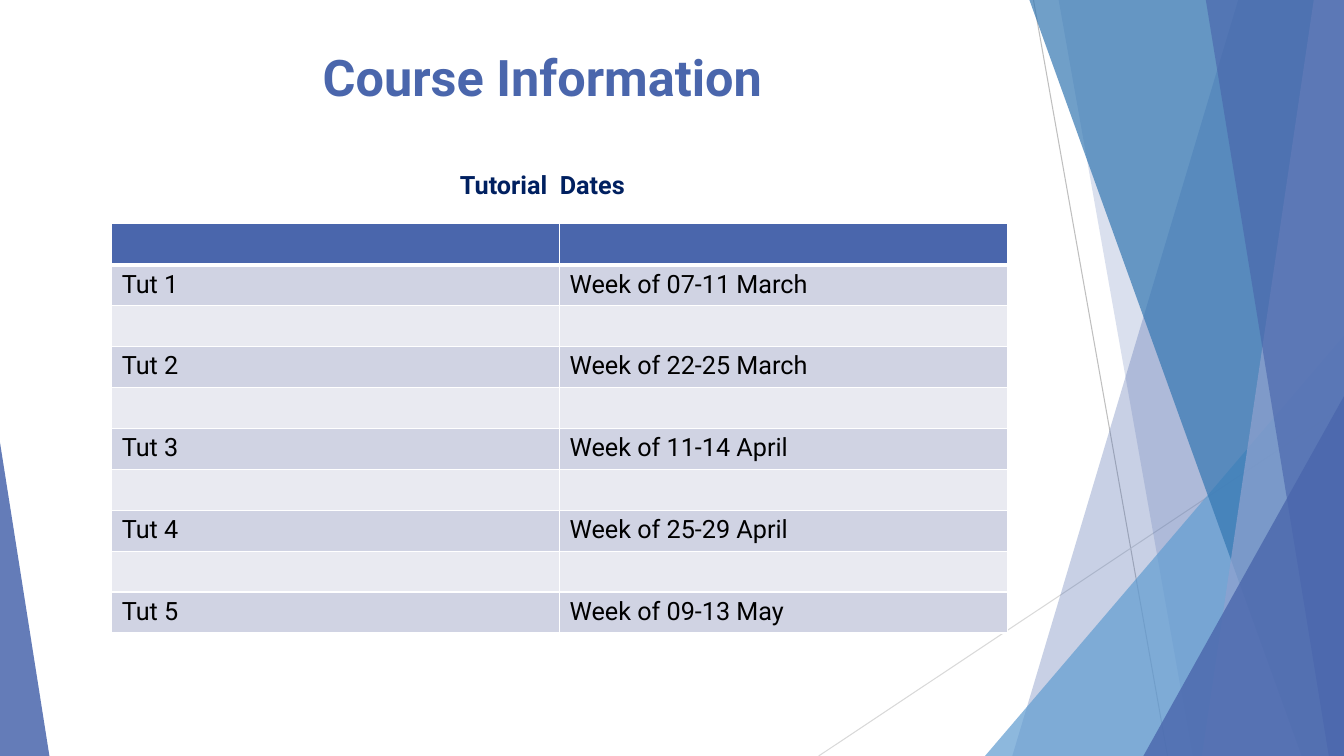
from lxml.etree import SubElement
from pptx import Presentation
from pptx.dml.color import RGBColor
from pptx.enum.shapes import MSO_CONNECTOR, MSO_SHAPE
from pptx.enum.text import MSO_ANCHOR, PP_ALIGN
from pptx.oxml.ns import qn
from pptx.util import Inches, Pt

W, H = 13.33, 7.5
FONT = "Roboto"
BLUE = RGBColor(0x4A, 0x66, 0xAC)
SKY = RGBColor(0x62, 0x9D, 0xD1)
OCEAN = RGBColor(0x34, 0x77, 0xB2)
LAVENDER = RGBColor(0x90, 0xA2, 0xCF)
NAVY = RGBColor(0x00, 0x20, 0x60)
BLACK = RGBColor(0, 0, 0)
WHITE = RGBColor(0xFF, 0xFF, 0xFF)
BAND_DARK = RGBColor(0xD0, 0xD3, 0xE3)
BAND_LIGHT = RGBColor(0xE9, 0xEA, 0xF1)
GREY = RGBColor(0xBF, 0xBF, 0xBF)
PALE_GREY = RGBColor(0xD9, 0xD9, 0xD9)

TUTORIALS = [
    ("Tut 1", "Week of 07-11 March"),
    ("Tut 2", "Week of 22-25 March"),
    ("Tut 3", "Week of 11-14 April"),
    ("Tut 4", "Week of 25-29 April"),
    ("Tut 5", "Week of 09-13 May"),
]


def add_run(p, text, size, color, bold=False):
    r = p.add_run()
    r.text = text
    r.font.name = FONT
    r.font.size = Pt(size)
    r.font.bold = bold
    r.font.color.rgb = color


def paint(sp, color, opacity):
    """Fill without outline or shadow; opacity in percent."""
    sp.shadow.inherit = False
    sp.line.fill.background()
    sp.fill.solid()
    sp.fill.fore_color.rgb = color
    clr = sp.fill._xPr.find(qn("a:solidFill"))[0]
    SubElement(clr, qn("a:alpha")).set("val", str(opacity * 1000))


def add_ray(s, start, end, color):
    ray = s.shapes.add_connector(MSO_CONNECTOR.STRAIGHT, *map(Inches, start + end))
    ray.line.color.rgb = color
    ray.line.width = Pt(0.75)
    SubElement(ray._element.spPr, qn("a:effectLst"))


def add_shard(s, top_x, bottom_x, color, opacity):
    """Full-height panel from a slanted left edge to the slide's right edge."""
    builder = s.shapes.build_freeform(Inches(top_x), 0, scale=1.0)
    corners = [(W, 0), (W, H), (bottom_x, H)]
    builder.add_line_segments([(Inches(x), Inches(y)) for x, y in corners])
    paint(builder.convert_to_shape(), color, opacity)


def add_corner(s, left, top, width, apex, color, opacity):
    """Right triangle standing on the bottom edge; apex 0 is left, 1 is right."""
    box = map(Inches, (left, top, width, H - top))
    sp = s.shapes.add_shape(MSO_SHAPE.ISOSCELES_TRIANGLE, *box)
    sp.adjustments[0] = apex
    paint(sp, color, opacity)


def add_decoration(s):
    add_ray(s, (10.25, 0), (11.58, H), GREY)
    add_ray(s, (W, 4.03), (8.12, H), PALE_GREY)
    add_shard(s, 12.28, 10.04, BLUE, 30)
    add_shard(s, 10.5, 11.83, BLUE, 20)
    add_corner(s, 9.77, 3.33, W - 9.77, 1, SKY, 72)
    add_shard(s, 10.21, 12.91, OCEAN, 70)
    add_shard(s, 13.03, 11.92, LAVENDER, 70)
    add_shard(s, 11.96, 13.18, BLUE, 65)
    add_corner(s, 11.34, 3.93, W - 11.34, 1, BLUE, 80)
    add_corner(s, 0, 4.39, 0.49, 0, BLUE, 85)


def add_title(s, left, top, width, height):
    sp = s.shapes.title
    sp.left, sp.top, sp.width, sp.height = map(Inches, (left, top, width, height))
    tf = sp.text_frame
    tf.vertical_anchor = MSO_ANCHOR.MIDDLE
    p = tf.paragraphs[0]
    p.alignment = PP_ALIGN.CENTER
    p.line_spacing = 0.9
    add_run(p, "Course Information", 36, BLUE, bold=True)


def add_caption(s, left, top, width, height):
    tf = s.shapes.add_textbox(*map(Inches, (left, top, width, height))).text_frame
    tf.word_wrap = True
    p = tf.paragraphs[0]
    p.alignment = PP_ALIGN.CENTER
    add_run(p, "Tutorial  Dates", 18, NAVY, bold=True)


def set_borders(cell, bottom):
    tc_pr = cell._tc.get_or_add_tcPr()
    for side, width in (("L", 1), ("R", 1), ("T", 1), ("B", bottom)):
        ln = SubElement(tc_pr, qn(f"a:ln{side}"), w=str(Pt(width)))
        fill = SubElement(ln, qn("a:solidFill"))
        SubElement(fill, qn("a:srgbClr"), val=str(WHITE))


def add_schedule(s, left, top, width, height):
    """Header row, then tutorial rows with an empty row between each pair."""
    rows = 2 * len(TUTORIALS)
    box = map(Inches, (left, top, width, height))
    table = s.shapes.add_table(rows, 2, *box).table
    for i in range(rows):
        table.rows[i].height = Inches(height / rows)
        color = BLUE if i == 0 else BAND_DARK if i % 2 else BAND_LIGHT
        for j in range(2):
            cell = table.cell(i, j)
            set_borders(cell, bottom=1 if i else 3)
            cell.fill.solid()
            cell.fill.fore_color.rgb = color
            if i % 2:
                p = cell.text_frame.paragraphs[0]
                add_run(p, TUTORIALS[i // 2][j], 18, BLACK)


def main():
    prs = Presentation()
    prs.slide_width, prs.slide_height = Inches(W), Inches(H)
    s = prs.slides.add_slide(prs.slide_layouts[5])
    add_decoration(s)
    add_title(s, 0.68, 0.37, 9.4, 0.86)
    add_caption(s, 3.15, 1.63, 4.46, 0.4)
    add_schedule(s, 1.11, 2.22, 8.88, 4.06)
    prs.save("out.pptx")


if __name__ == "__main__":
    main()
